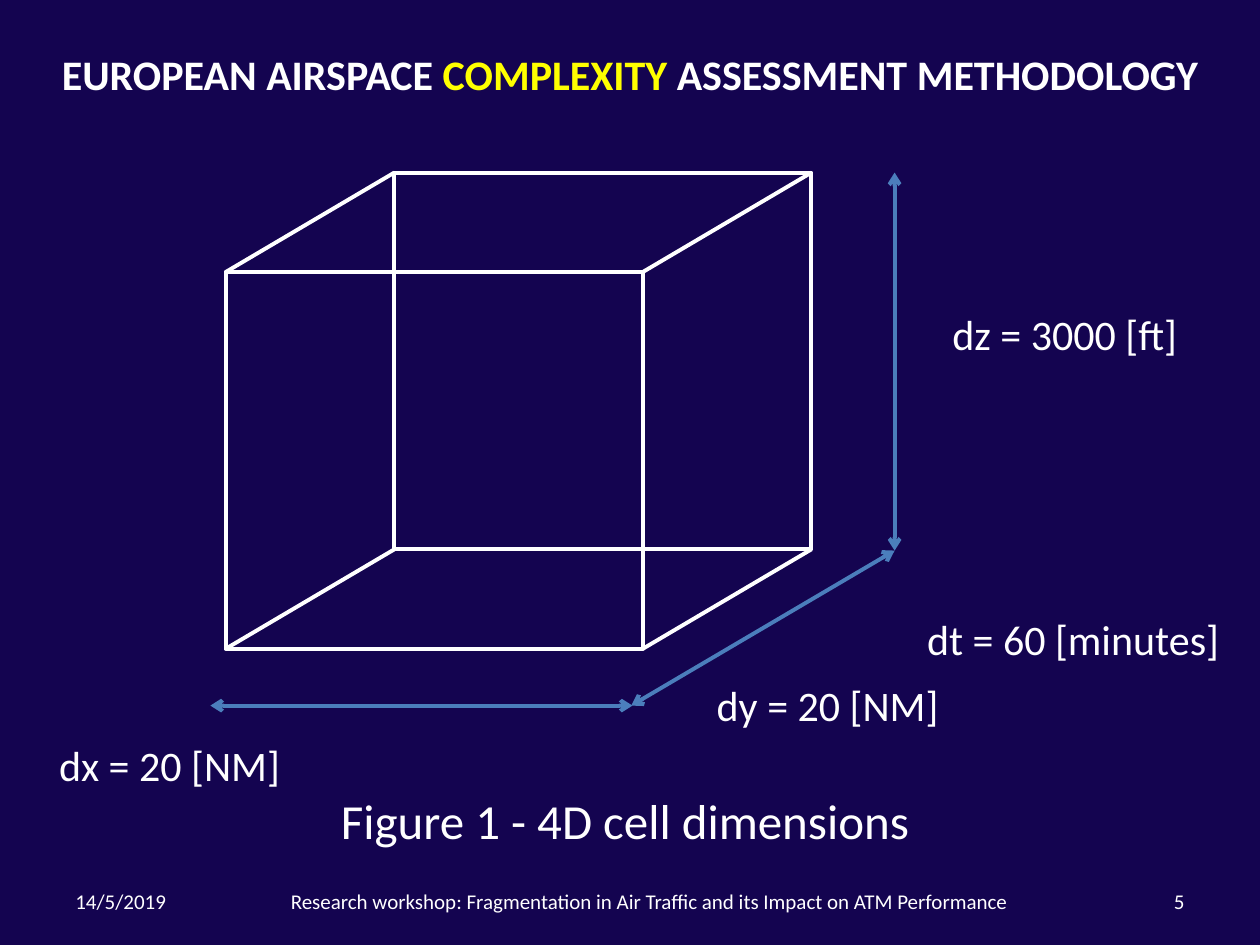
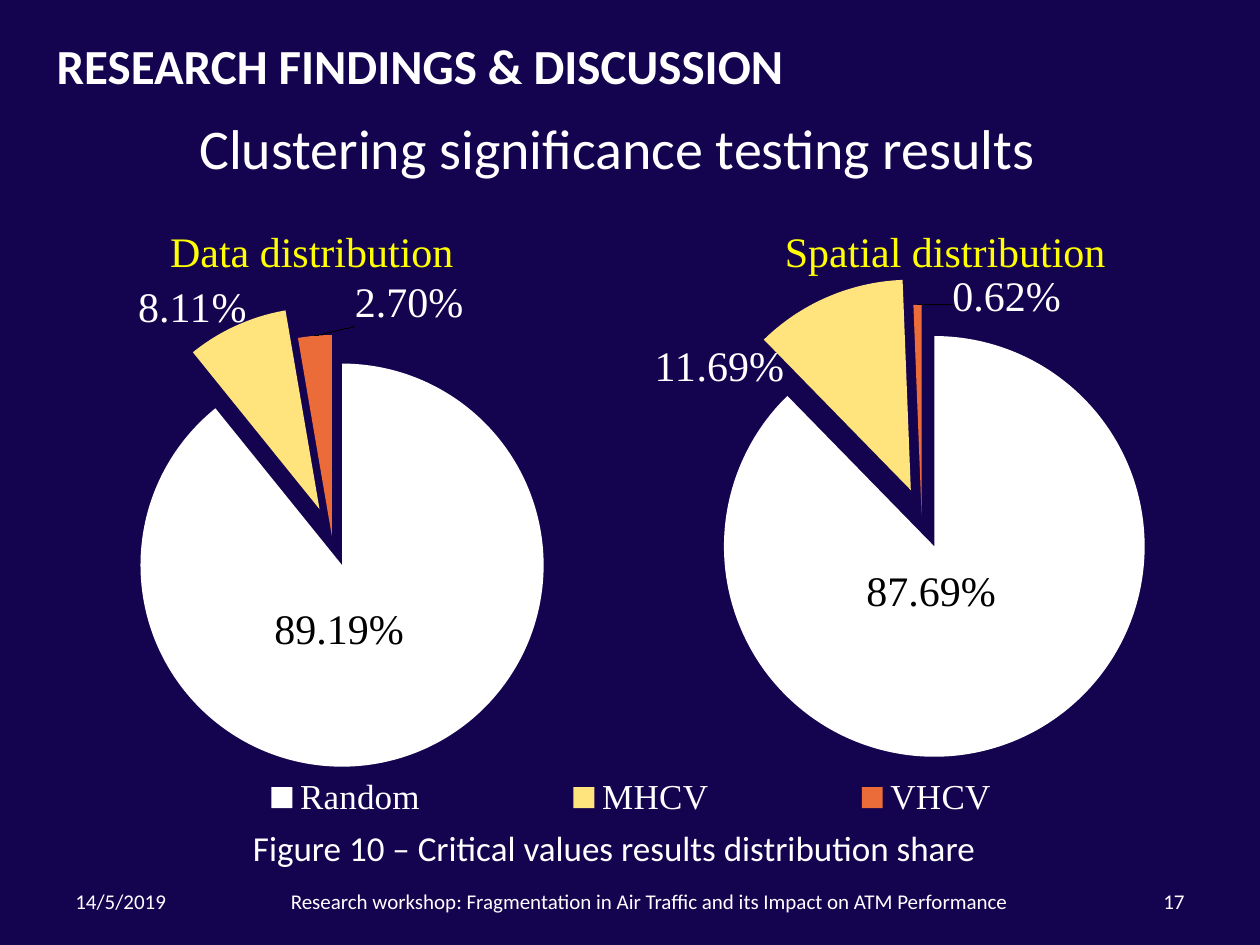
from dataclasses import dataclass

from lxml.etree import SubElement
from pptx import Presentation
from pptx.chart.data import CategoryChartData
from pptx.dml.color import RGBColor as RGB
from pptx.enum.chart import XL_CHART_TYPE as CHART
from pptx.enum.chart import XL_LABEL_POSITION as LABEL
from pptx.enum.chart import XL_LEGEND_POSITION as LEGEND
from pptx.enum.shapes import MSO_CONNECTOR as CONNECTOR
from pptx.enum.shapes import MSO_SHAPE as SHAPE
from pptx.enum.text import MSO_ANCHOR as ANCHOR
from pptx.enum.text import MSO_AUTO_SIZE as AUTO
from pptx.enum.text import PP_ALIGN as ALIGN
from pptx.oxml.ns import qn
from pptx.util import Pt


@dataclass(frozen=True)
class Theme:
    back: RGB = RGB(0x14, 0x04, 0x50)
    text: RGB = RGB(0xFF, 0xFF, 0xFF)
    accent: RGB = RGB(0xFF, 0xFF, 0x00)
    arrow: RGB = RGB(0x4B, 0x7E, 0xBC)
    dark: RGB = RGB(0x00, 0x00, 0x00)
    slices: tuple = (RGB(0xFF, 0xFF, 0xFF), RGB(0xFF, 0xE3, 0x7D), RGB(0xEB, 0x6B, 0x39))
    font: str = "Calibri"
    chart_font: str = "Times New Roman"
    line: Pt = Pt(2.25)
    footer: Pt = Pt(12)
    small: Pt = Pt(20)
    label: Pt = Pt(24)
    heading: Pt = Pt(28)
    subtitle: Pt = Pt(32)


T = Theme()
PX = 9144


def write(sp, pieces, size, box, align=ALIGN.LEFT, anchor=ANCHOR.MIDDLE, bold=False):
    sp.left, sp.top, sp.width, sp.height = [v * PX for v in box]
    tf = sp.text_frame
    tf.word_wrap = True
    tf.auto_size = AUTO.NONE
    tf.vertical_anchor = anchor
    p = tf.paragraphs[0]
    p.alignment = align
    for piece, color in zip(pieces, (T.text, T.accent, T.text)):
        r = p.add_run()
        r.text = piece
        r.font.name = T.font
        r.font.size = size
        r.font.bold = bold
        r.font.color.rgb = color
    return p


def set_layout(el, index, chart_size, box, edge=True, inner=False):
    for old in el.findall(qn("c:layout")):
        el.remove(old)
    layout = SubElement(el, qn("c:layout"))
    el.insert(index, layout)
    manual = SubElement(layout, qn("c:manualLayout"))
    modes = [("layoutTarget", "inner")] if inner else []
    if edge:
        modes += [("xMode", "edge"), ("yMode", "edge")]
    shares = [(key, str(round(v / size, 4))) for key, v, size in zip("xywh", box, chart_size * 2)]
    for key, val in modes + shares:
        SubElement(manual, qn(f"c:{key}")).set("val", val)


prs = Presentation()
prs.slide_width, prs.slide_height = 1000 * PX, 750 * PX
fill = prs.slide_master.background.fill
fill.solid()
fill.fore_color.rgb = T.back

cell_slide = prs.slides.add_slide(prs.slide_layouts[5])
findings_slide = prs.slides.add_slide(prs.slide_layouts[1])

for s, number in ((cell_slide, "5"), (findings_slide, "17")):
    for text, box, align in (
        ("14/5/2019", (50, 695, 233, 40), ALIGN.LEFT),
        ("Research workshop: Fragmentation in Air Traffic and its Impact on ATM Performance",
         (177, 695, 677, 40), ALIGN.CENTER),
        (number, (717, 695, 233, 40), ALIGN.RIGHT),
    ):
        write(s.shapes.add_textbox(0, 0, 0, 0), [text], T.footer, box, align)

s = cell_slide
write(s.shapes.title, ["EUROPEAN AIRSPACE ", "COMPLEXITY ", "ASSESSMENT METHODOLOGY"],
      T.label, (0, 0, 1000, 117), ALIGN.CENTER, bold=True)
write(s.shapes.add_textbox(0, 0, 0, 0), ["Figure 1 - 4D cell dimensions"],
      T.heading, (-4, 616, 1000, 70), ALIGN.CENTER)

cube_w, cube_h = 331, 299
front_x, front_y = 179, 216
back_x, back_y = 313, 137
for x, y in ((front_x, front_y), (back_x, back_y)):
    sp = s.shapes.add_shape(SHAPE.RECTANGLE, x * PX, y * PX, cube_w * PX, cube_h * PX)
    sp.shadow.inherit = False
    sp.fill.background()
    sp.line.color.rgb = T.text
    sp.line.width = T.line

edges = [(back_x + dx, back_y + dy, front_x + dx, front_y + dy)
         for dx in (0, cube_w) for dy in (0, cube_h)]
arrows = [(167, 560, 502, 560), (501, 560, 710, 437), (710, 437, 710, 137)]
for ends in edges + arrows:
    line = s.shapes.add_connector(CONNECTOR.STRAIGHT, *[v * PX for v in ends])
    line.line.width = T.line
    line.line.color.rgb = T.arrow if ends in arrows else T.text
    if ends in arrows:
        ln = line.line._get_or_add_ln()
        for end in ("headEnd", "tailEnd"):
            SubElement(ln, qn(f"a:{end}")).set("type", "arrow")
    SubElement(line._element.spPr, qn("a:effectLst"))

for text, box in (
    ("dz = 3000 [ft]", (746, 240, 213, 50)),
    ("dy = 20 [NM]", (559, 534, 210, 50)),
    ("dt = 60 [minutes]", (726, 482, 263, 50)),
    ("dx = 20 [NM]", (37, 582, 208, 50)),
):
    write(s.shapes.add_textbox(0, 0, 0, 0), [text], T.label, box, anchor=ANCHOR.TOP)

s = findings_slide
write(s.shapes.title, ["RESEARCH FINDINGS & DISCUSSION"], T.heading, (35, 13, 900, 77), bold=True)
p = write(s.placeholders[1], ["Clustering significance testing results"],
          T.subtitle, (40, 85, 900, 79), ALIGN.CENTER, ANCHOR.TOP)
pPr = p._p.get_or_add_pPr()
pPr.set("marL", "0")
pPr.set("indent", "0")
SubElement(pPr, qn("a:buNone"))

pies = (
    ("Data distribution", ("Random", "MHCV", "VHCV"), (0.8919, 0.0811, 0.027),
     (47, 155, 876, 504), (82, 17), (53, 111, 327, 320), (15, 15, 0),
     ((-29, -24), (-68, -87), (68, -106)), (56, 458, 796, 40)),
    ("Spatial distribution", ("1", "2", "3"), (0.8769, 0.1169, 0.0062),
     (224, 147, 756, 488), (393, 25), (339, 95, 337, 334), (16, 13, 0),
     ((-34, -41), (-119, -21), (69, -90)), None),
)
for name, cats, vals, box, title_at, plot_box, explosions, shifts, legend_box in pies:
    data = CategoryChartData(number_format="0.00%")
    data.categories = cats
    data.add_series(name, vals)
    chart = s.shapes.add_chart(CHART.PIE, *[v * PX for v in box], data).chart
    size = box[2:]
    chart.font.name = T.chart_font
    chart.font.size = T.label
    chart.font.color.rgb = T.text
    frame = chart._chartSpace.find(qn("c:chart"))
    spPr = SubElement(chart._chartSpace, qn("c:spPr"))
    SubElement(spPr, qn("a:noFill"))
    SubElement(SubElement(spPr, qn("a:ln")), qn("a:noFill"))
    frame.addnext(spPr)
    set_layout(frame.find(qn("c:plotArea")), 0, size, plot_box, inner=True)

    chart.has_title = True
    p = chart.chart_title.text_frame.paragraphs[0]
    p.text = name
    font = p.runs[0].font
    font.name = T.chart_font
    font.size = T.label
    font.bold = False
    font.color.rgb = T.accent
    set_layout(chart.chart_title._element, 1, size, title_at)

    chart.has_legend = legend_box is not None
    if legend_box:
        chart.legend.position = LEGEND.BOTTOM
        chart.legend.include_in_layout = False
        chart.legend.font.name = T.chart_font
        chart.legend.font.size = T.small
        chart.legend.font.color.rgb = T.text
        set_layout(chart.legend._element, 1, size, legend_box)

    plot = chart.plots[0]
    plot.vary_by_categories = True
    ser = plot.series[0]
    labels = ser.data_labels
    labels.show_value = True
    labels.number_format = "0.00%"
    labels.number_format_is_linked = False
    labels.position = LABEL.CENTER
    for i, (color, explosion, shift) in enumerate(zip(T.slices, explosions, shifts)):
        point = ser.points[i]
        point.format.fill.solid()
        point.format.fill.fore_color.rgb = color
        point.format.line.fill.background()
        dPt = ser._element.get_or_add_dPt_for_point(i)
        burst = SubElement(dPt, qn("c:explosion"))
        burst.set("val", str(explosion))
        dPt.insert(1, burst)
        font = point.data_label.font
        font.name = T.chart_font
        font.size = T.label
        font.color.rgb = T.dark if i == 0 else T.text
        point.data_label.position = LABEL.CENTER
        dLbl = ser._element.findall(".//" + qn("c:dLbl"))[i]
        set_layout(dLbl, 1, size, shift, edge=False)

p = write(s.shapes.add_textbox(0, 0, 0, 0),
          ["Figure 10 – Critical values results distribution share"],
          T.small, (35, 651, 905, 62), ALIGN.CENTER, ANCHOR.TOP)
p.space_before = Pt(4)

prs.save("out.pptx")
